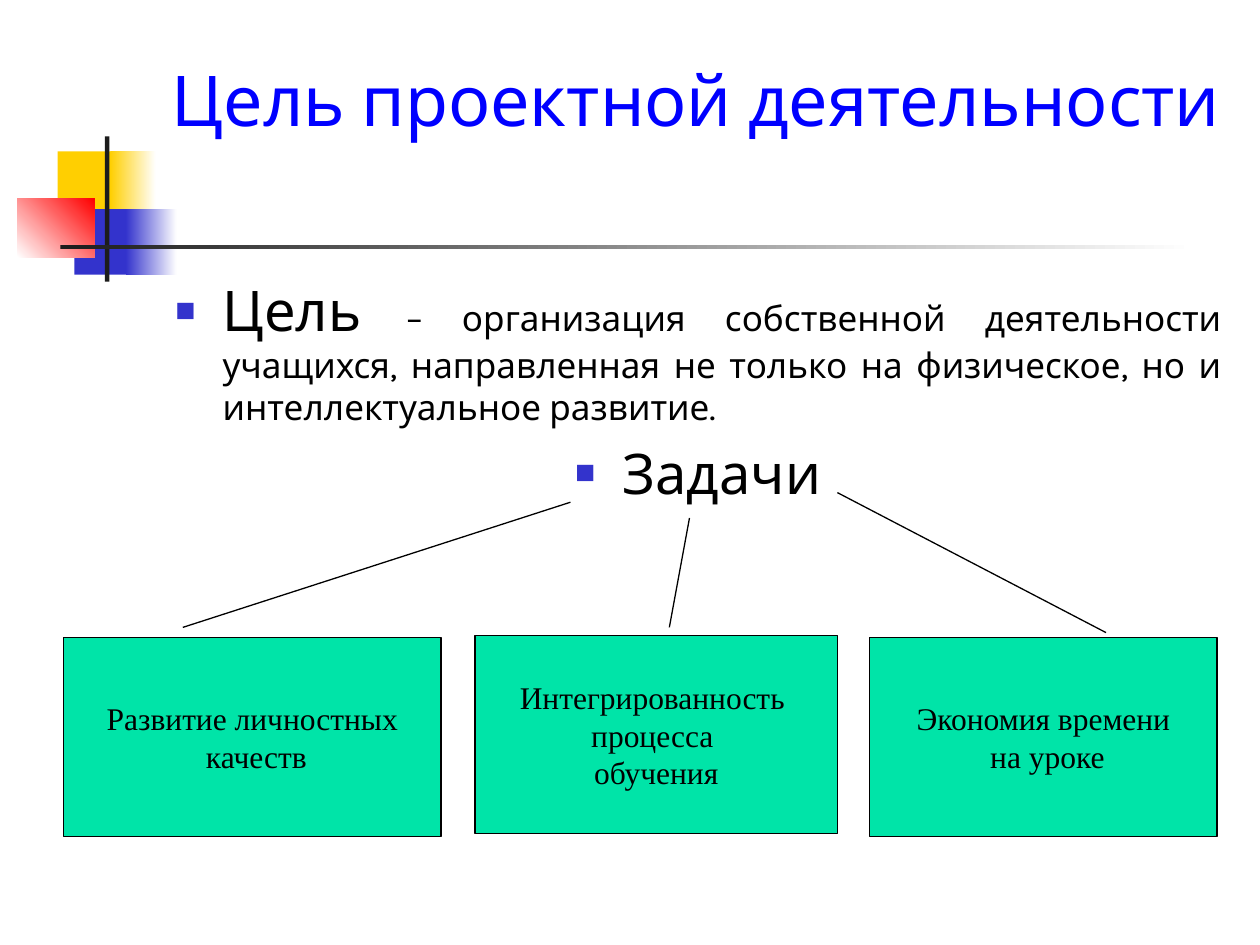
"""Build the slide on the aim and tasks of project work."""
from lxml.etree import SubElement
from pptx import Presentation
from pptx.dml.color import RGBColor
from pptx.enum.shapes import MSO_CONNECTOR as CONN, MSO_SHAPE as SHAPE
from pptx.enum.text import MSO_ANCHOR as ANCHOR, MSO_AUTO_SIZE as AUTO, PP_ALIGN as ALIGN
from pptx.oxml.ns import qn
from pptx.util import Pt

BLACK = RGBColor(0x00, 0x00, 0x00)
WHITE = RGBColor(0xFF, 0xFF, 0xFF)
INK = RGBColor(0x1C, 0x1C, 0x1C)
BLUE = RGBColor(0x00, 0x00, 0xFF)
INDIGO = RGBColor(0x33, 0x33, 0xCC)
YELLOW = RGBColor(0xFF, 0xCF, 0x01)
RED = RGBColor(0xFF, 0x00, 0x00)
GREEN = RGBColor(0x00, 0xE4, 0xA8)


class Deck:
    head_font = "Karla"
    box_font = "Times New Roman"
    line_width = Pt(0.75)

    def __init__(self, width, height):
        self.prs = Presentation()
        self.prs.slide_width, self.prs.slide_height = Pt(width), Pt(height)
        self.s = self.prs.slides.add_slide(self.prs.slide_layouts[1])

    def place(self, sp, left, top, width, height):
        sp.left, sp.top, sp.width, sp.height = map(Pt, (left, top, width, height))

    def run(self, p, text, size, font, color=BLACK):
        r = p.add_run()
        r.text = text
        r.font.size, r.font.name = Pt(size), font
        r.font.color.rgb = color

    def rect(self, at, *colors, angle=0):
        sp = self.s.shapes.add_shape(SHAPE.RECTANGLE, *map(Pt, at))
        sp.shadow.inherit = False
        sp.line.fill.background()
        if len(colors) == 1:
            sp.fill.solid()
            sp.fill.fore_color.rgb = colors[0]
        else:
            sp.fill.gradient()
            sp.fill.gradient_angle = angle
            for stop, color in zip(sp.fill.gradient_stops, colors):
                stop.color.rgb = color
        return sp

    def title(self, at, text):
        sp = self.s.shapes.title
        self.place(sp, *at)
        tf = sp.text_frame
        tf.auto_size, tf.vertical_anchor = AUTO.NONE, ANCHOR.BOTTOM
        tf.margin_right, tf.margin_bottom = Pt(0), Pt(51)
        p = tf.paragraphs[0]
        p.alignment = ALIGN.LEFT
        self.run(p, text, 40, self.head_font, BLUE)

    def body(self, at, items):
        sp = self.s.placeholders[1]
        self.place(sp, *at)
        tf = sp.text_frame
        tf.auto_size = AUTO.NONE
        for i, (align, runs) in enumerate(items):
            p = tf.add_paragraph() if i else tf.paragraphs[0]
            p.alignment, p.line_spacing, p.space_before = align, 1.0, Pt(6.4)
            self.bullet(p)
            for text, size in runs:
                self.run(p, text, size, self.head_font)

    def bullet(self, p):
        pPr = p._p.get_or_add_pPr()
        pPr.set("marL", str(Pt(27)))
        pPr.set("indent", str(-Pt(27)))
        clr = SubElement(pPr, qn("a:buClr"))
        SubElement(clr, qn("a:srgbClr"), val=str(INDIGO))
        SubElement(pPr, qn("a:buSzPct"), val="60000")
        SubElement(pPr, qn("a:buChar"), char="■")

    def box(self, at, lines):
        sp = self.rect(at, GREEN)
        sp.line.color.rgb, sp.line.width = BLACK, self.line_width
        tf = sp.text_frame
        tf.word_wrap, tf.vertical_anchor = False, ANCHOR.MIDDLE
        for i, text in enumerate(lines):
            p = tf.add_paragraph() if i else tf.paragraphs[0]
            p.alignment = ALIGN.CENTER
            self.run(p, text, 18, self.box_font)

    def line(self, *ends):
        cxn = self.s.shapes.add_connector(CONN.STRAIGHT, *map(Pt, ends))
        cxn.line.color.rgb, cxn.line.width = BLACK, self.line_width
        SubElement(cxn._element.spPr, qn("a:effectLst"))


def main():
    deck = Deck(720, 540)
    deck.rect((33, 86.5, 34.5, 37.5), YELLOW)
    deck.rect((63, 86.5, 26, 37.5), YELLOW, WHITE)
    deck.rect((42.5, 119.5, 33, 37.5), INDIGO)
    deck.rect((72, 119.5, 29, 37.5), INDIGO, WHITE)
    deck.rect((10, 113.5, 44, 33.5), WHITE, RED, angle=45)
    deck.rect((60, 78, 2.5, 83), INK)
    deck.rect((34.5, 140, 648, 2.5), INK, WHITE)

    deck.title((91, 16.5, 613.5, 115), "Цель проектной деятельности")
    deck.body((93, 154, 612, 324), [
        (ALIGN.JUSTIFY, [
            ("Цель ", 32),
            ("– организация собственной деятельности учащихся, направленная "
             "не только на физическое, но и интеллектуальное развитие. ", 20)]),
        (ALIGN.CENTER, [("Задачи", 32)]),
    ])

    deck.box((36.5, 364.5, 215.5, 113.5), ["Развитие личностных", " качеств"])
    deck.box((271.5, 363, 207, 113.5), ["Интегрированность ", "процесса ", "обучения"])
    deck.box((497, 364.5, 198.5, 113.5), ["Экономия времени", " на уроке"])

    deck.line(632, 361.5, 478.5, 281.5)
    deck.line(104.5, 358.5, 326, 287)
    deck.line(394, 296, 382.5, 358.5)
    deck.prs.save("out.pptx")


if __name__ == "__main__":
    main()
